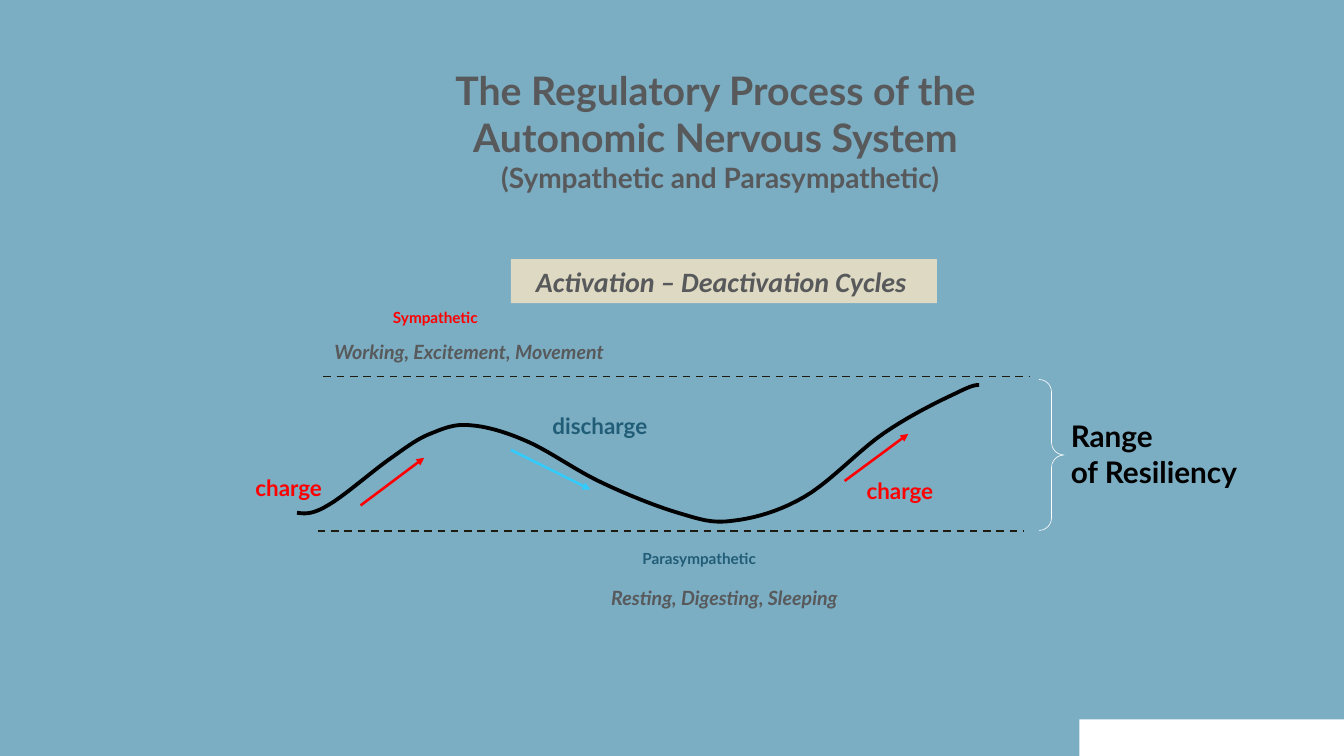
from pptx import Presentation, util as u
from pptx.dml.color import RGBColor
from pptx.enum import dml, shapes, text
from pptx.oxml.ns import qn
from lxml import etree

PX = 9144  # 100 px to the inch
HUE = {"sky": "7BADC3", "white": "FFFFFF", "sand": "DDD9C3", "gray": "58595B",
       "red": "FF0000", "teal": "215D77", "cyan": "33CCFF", "black": "000000",
       "dark": "1E1C11"}
WIDE, SLIM = (16, 8), (10, 5)  # text insets

# Content: box, paragraphs (words, size), colour, insets
TITLE = ((708, 101, 941, 199), [("The Regulatory Process of the ", 46.2),
                                ("Autonomic Nervous System ", 46.2),
                                ("(Sympathetic and Parasympathetic)", 33)])
BANNER = ((836, 424, 697, 72), [("Activation – Deactivation Cycles", 33)])
LABELS = [
    ((627, 496, 184, 47), "Sympathetic", 18, "red", WIDE, False),
    ((1035, 891, 237, 47), "Parasympathetic", 18, "teal", WIDE, False),
    ((408, 771, 140, 54), "charge", 26.4, "red", SLIM, False),
    ((894, 670, 192, 54), "discharge", 26.4, "teal", SLIM, False),
    ((1408, 775, 140, 54), "charge", 26.4, "red", SLIM, False),
    ((531, 548, 530, 56), "Working, Excitement, Movement", 23.1, "gray", WIDE, True),
    ((984, 950, 465, 56), "Resting, Digesting, Sleeping", 23.1, "gray", WIDE, True),
    ((1736, 676, 331, 134), "Range \vof Resiliency", 35, "black", WIDE, False),
]
ARROWS = [((590, 827), (694, 749), "red"), ((836, 736), (966, 801), "cyan"),
          ((1382, 787), (1486, 710), "red")]
LIMITS = [((529, 616), (1683, 616)), ((520, 869), (1674, 869))]
# Wave: start, then two handles and an end for each bend
START = (486, 839)
BENDS = [
    ((499, 841), (512, 842), (538, 826)), ((564, 811), (614, 767), (642, 748)),
    ((670, 728), (685, 717), (706, 709)), ((728, 700), (745, 693), (771, 696)),
    ((797, 698), (828, 707), (862, 722)), ((897, 737), (938, 767), (979, 787)),
    ((1020, 807), (1072, 828), (1109, 839)), ((1146, 850), (1165, 857), (1200, 852)),
    ((1234, 848), (1275, 837), (1316, 813)), ((1358, 789), (1405, 737), (1446, 709)),
    ((1488, 680), (1537, 656), (1563, 644)), ((1589, 631), (1595, 630), (1602, 630)),
]
STEPS = 10

deck = Presentation()
deck.slide_width, deck.slide_height = 2199 * PX, 1237 * PX
slide = deck.slides.add_slide(deck.slide_layouts[6])
tree = slide.shapes


def rgb(name):
    return RGBColor.from_string(HUE[name])


def emu(nums):
    return [n * PX for n in nums]


def paint(fill, name):
    fill.solid()
    fill.fore_color.rgb = rgb(name)


def stroke(shape, name, width):
    shape.line.color.rgb = rgb(name)
    shape.line.width = u.Pt(width)


def write(area, paras, hue, inset=WIDE, slant=False, wrap=False, grow=True,
          align=None, face="Lato"):
    box = tree.add_textbox(*emu(area))
    frame = box.text_frame
    side, top = emu(inset)
    size = text.MSO_AUTO_SIZE
    form = {"margin_left": side, "margin_right": side, "margin_top": top,
            "margin_bottom": top, "word_wrap": wrap,
            "auto_size": size.SHAPE_TO_FIT_TEXT if grow else size.NONE}
    for key, val in form.items():
        setattr(frame, key, val)
    for i, (words, points) in enumerate(paras):
        para = frame.add_paragraph() if i else frame.paragraphs[0]
        para.text = words
        para.alignment = align
        look = {"name": face, "size": u.Pt(points), "bold": True, "italic": slant}
        for key, val in look.items():
            setattr(para.font, key, val)
        para.font.color.rgb = rgb(hue)
    return box


def link(start, end, hue, width):
    line = tree.add_connector(shapes.MSO_CONNECTOR.STRAIGHT, *emu(start + end))
    stroke(line, hue, width)
    etree.SubElement(line._element.spPr, qn("a:effectLst"))
    return line


def bend(ends):
    a, b, c, d = ends
    for i in range(1, STEPS + 1):
        t = i / STEPS
        s = 1 - t
        yield tuple(round(PX * (s**3 * p + 3 * s * s * t * q + 3 * s * t * t * r + t**3 * e))
                    for p, q, r, e in zip(a, b, c, d))


# Backdrop and corner block
paint(slide.background.fill, "sky")
block = tree.add_shape(shapes.MSO_SHAPE.RECTANGLE, *emu((1766, 1177, 433, 60)))
block.shadow.inherit = False
paint(block.fill, "white")
block.line.fill.background()

# Wave
points, last = [], START
for turn in BENDS:
    points += bend((last, *turn))
    last = turn[-1]
path = tree.build_freeform(*emu(START))
path.add_line_segments(points, close=False)
wave = path.convert_to_shape()
wave.shadow.inherit = False
wave.fill.background()
stroke(wave, "black", 4.5)

# Arrows and range limits
for start, end, hue in ARROWS:
    arrow = link(start, end, hue, 3)
    etree.SubElement(arrow.line._get_or_add_ln(), qn("a:tailEnd"), type="triangle")
for start, end in LIMITS:
    link(start, end, "dark", 2.25).line.dash_style = dml.MSO_LINE.DASH

# Brace
brace = tree.add_shape(shapes.MSO_SHAPE.RIGHT_BRACE, *emu((1700, 621, 41, 247)))
brace.shadow.inherit = False
brace.fill.background()
brace.adjustments[0] = brace.adjustments[1] = 0.5
stroke(brace, "white", 0.75)

# Title, labels and banner
write(*TITLE, "gray", wrap=True, grow=False, align=text.PP_ALIGN.CENTER)
for area, words, points, hue, inset, slant in LABELS:
    write(area, [(words, points)], hue, inset, slant)
banner = write(*BANNER, "gray", slant=True, wrap=True, face="Calibri")
paint(banner.fill, "sand")
para = banner.text_frame.paragraphs[0]
para.space_after = u.Pt(29.7)
props = para._p.get_or_add_pPr()
props.set("marL", str(25 * PX))
props.set("indent", "0")

deck.save("out.pptx")
